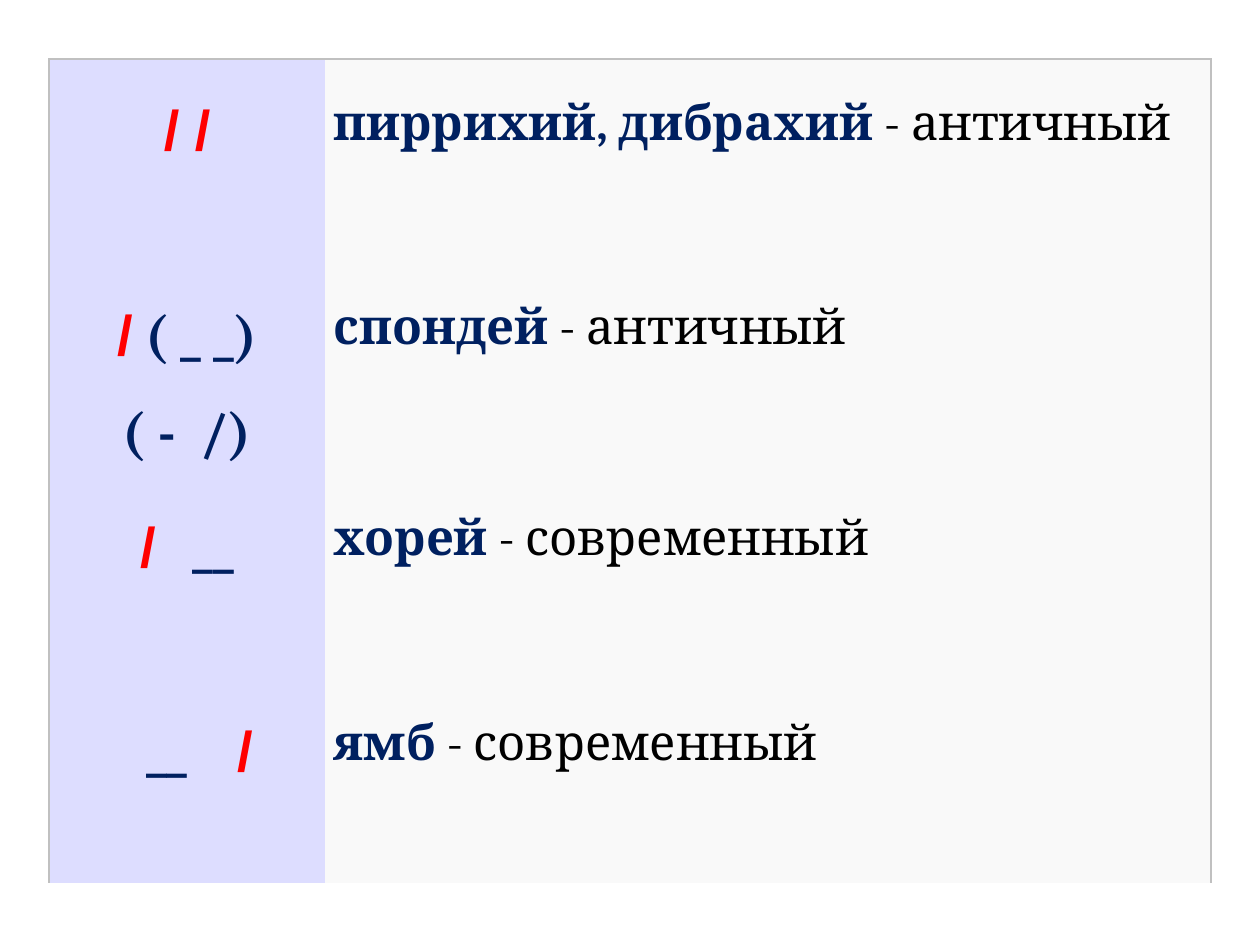
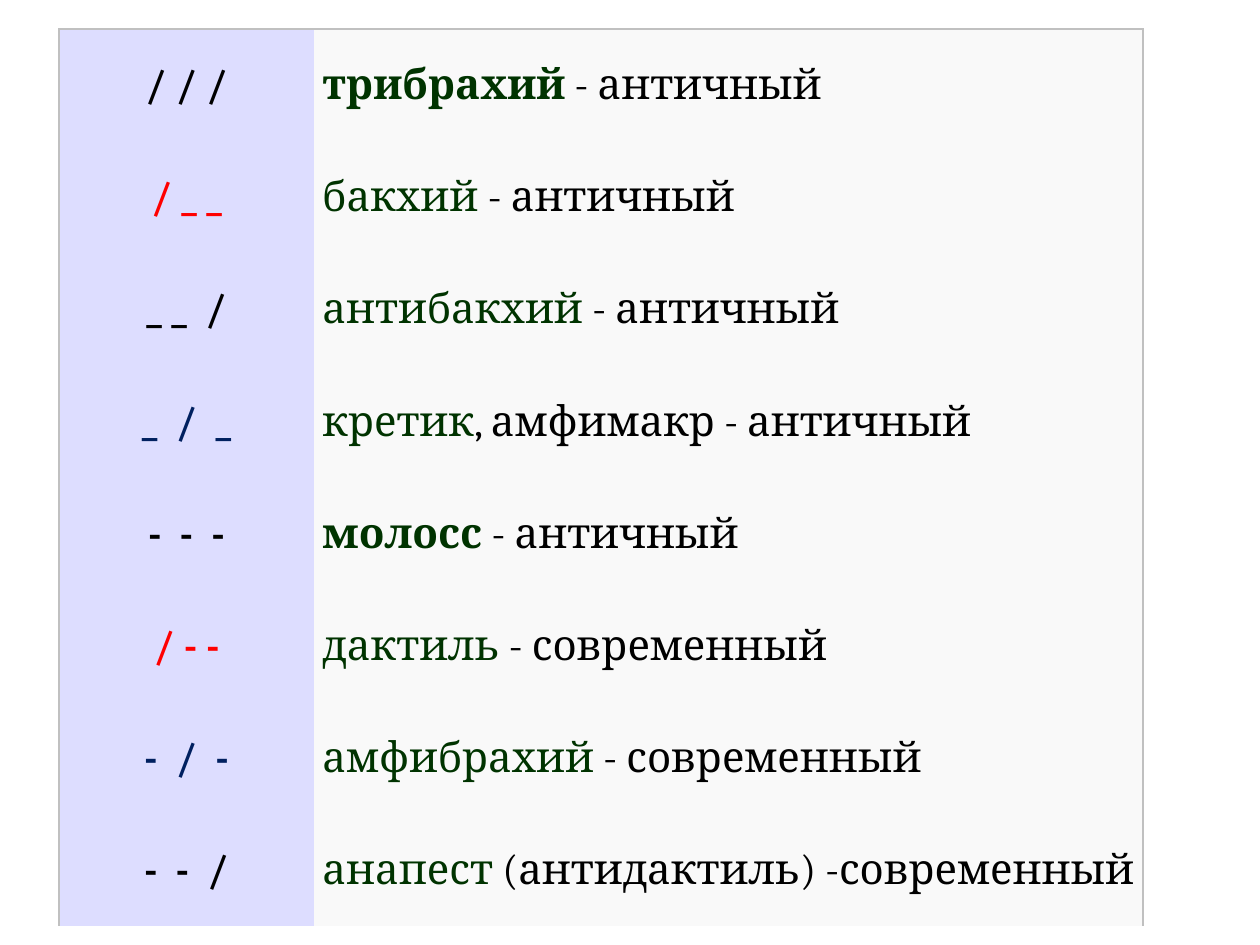
from lxml import etree
from pptx import Presentation
from pptx import util as u
from pptx.dml.color import RGBColor
from pptx.enum import text
from pptx.oxml import ns

COLORS = {
    "symbol_fill": "DDDDFF", "name_fill": "F9F9F9", "border": "C0C0C0",
    "black": "000000", "red": "FF0000", "navy": "002060",
    "green": "003300", "crimson": "C00000",
}
NO_STYLE_GRID = "{2D5ABB26-0587-4C30-8999-92F81FD0307C}"

# Run styles: font, colour, bold, outline colour
STYLES = {
    "accent": ("Arial", "red", True, None),
    "red": ("Cambria", "red", True, None),
    "navy": ("Cambria", "navy", True, None),
    "plain": ("Cambria", "black", False, None),
    "black": ("Cambria", "black", True, None),
    "green": ("Cambria", "green", True, None),
    "red_lined": ("Cambria", "red", True, "navy"),
    "black_lined": ("Cambria", "black", True, "green"),
    "navy_lined": ("Cambria", "navy", True, "crimson"),
    "green_navy": ("Cambria", "green", False, "navy"),
    "green_green": ("Cambria", "green", False, "green"),
    "green_crimson": ("Cambria", "green", False, "crimson"),
    "plain_crimson": ("Cambria", "black", False, "crimson"),
}

# Each row: paragraphs of the symbol cell, then runs of the name cell
TWO_SYLLABLES = [
    ([[("/ /", "accent")]],
     [("пиррихий, дибрахий ", "navy"), ("- античный", "plain")]),
    ([[(" ", "red"), ("/", "accent"), (" ( _ _) ", "navy")],
      [("( -  /)", "navy")]],
     [("спондей ", "navy"), ("- античный", "plain")]),
    ([[("/", "accent"), ("   __", "navy")]],
     [("хорей", "navy"), (" - современный", "plain")]),
    ([[("  __    ", "navy"), ("/", "accent")]],
     [("ямб", "navy"), (" - современный", "plain")]),
]
THREE_SYLLABLES = [
    ([[("/ / /", "black")]],
     [("трибрахий ", "green"), ("- античный", "plain")]),
    ([[("/ _ _", "red_lined")]],
     [("бакхий ", "green_navy"), ("- античный", "plain")]),
    ([[("_ _  /", "black_lined")]],
     [("антибакхий ", "green_green"), ("- античный", "plain")]),
    ([[("_  /  _", "navy_lined")]],
     [("кретик", "green_crimson"), (", ", "plain_crimson"),
      ("амфимакр - античный", "plain")]),
    ([[("-  -  -", "black")]],
     [("молосс", "green"), (" - античный", "plain")]),
    ([[("/ - -", "red_lined")]],
     [("дактиль ", "green_navy"), ("- современный", "plain")]),
    ([[("-  /  -", "navy_lined")]],
     [("амфибрахий ", "green_crimson"), ("- современный", "plain")]),
    ([[("-  -  /", "black_lined")]],
     [("анапест ", "green_green"), ("(антидактиль) -современный", "plain")]),
]
SLIDES = [
    dict(rows=TWO_SYLLABLES, left=0.39, top=0.47, widths=(2.19, 7.03),
         row_height=1.62, symbol_size=32, name_size=28, first_gap=6),
    dict(rows=THREE_SYLLABLES, left=0.47, top=0.23, widths=(2.02, 6.58),
         row_height=0.89, symbol_size=24, name_size=24, first_gap=0),
]


def make_line(parent, tag, color, width):
    """Append a solid line, or an empty one when color is None."""
    line = etree.SubElement(parent, ns.qn(tag), w=str(int(u.Pt(width))))
    if color is None:
        etree.SubElement(line, ns.qn("a:noFill"))
    else:
        fill = etree.SubElement(line, ns.qn("a:solidFill"))
        etree.SubElement(fill, ns.qn("a:srgbClr"), val=COLORS[color])
    return line


def add_span(para, words, style, size):
    font_name, color, bold, outline = STYLES[style]
    span = para.add_run()
    span.text = words
    span.font.name = font_name
    span.font.size = u.Pt(size)
    span.font.bold = bold
    span.font.color.rgb = RGBColor.from_string(COLORS[color])
    if outline:
        properties = span.font._element
        properties.insert(0, make_line(properties, "a:ln", outline, 0.75))


def fill_cell(cell, paragraphs, size, align, fill, sides, right_margin=0.07):
    """Write the text of a cell, then its borders and fill."""
    cell.margin_left = cell.margin_top = cell.margin_bottom = u.Inches(0.07)
    cell.margin_right = u.Inches(right_margin)
    cell.vertical_anchor = text.MSO_ANCHOR.TOP
    for index, spans in enumerate(paragraphs):
        frame = cell.text_frame
        para = frame.add_paragraph() if index else frame.paragraphs[0]
        para.alignment = align
        para.line_spacing = 1.5
        for words, style in spans:
            add_span(para, words, style, size)
    properties = cell._tc.get_or_add_tcPr()
    for side in "LRTB":
        make_line(properties, f"a:ln{side}",
                  "border" if side in sides else None, 1)
    cell.fill.solid()
    cell.fill.fore_color.rgb = RGBColor.from_string(COLORS[fill])


def add_feet_table(page, rows, left, top, widths, row_height,
                   symbol_size, name_size, first_gap):
    frame = page.shapes.add_table(
        len(rows), 2, u.Inches(left), u.Inches(top),
        u.Inches(sum(widths)), u.Inches(row_height * len(rows)))
    table = frame.table
    table.first_row = table.horz_banding = False
    table._tbl.tblPr.find(ns.qn("a:tableStyleId")).text = NO_STYLE_GRID
    for column, width in zip(table.columns, widths):
        column.width = u.Inches(width)
    for index, (symbols, name) in enumerate(rows):
        table.rows[index].height = u.Inches(row_height)
        edge = "" if index else "T"
        fill_cell(table.cell(index, 0), symbols, symbol_size,
                  text.PP_ALIGN.CENTER, "symbol_fill", "L" + edge)
        # The longest name needs a slim right margin to stay on one line
        fill_cell(table.cell(index, 1), [name], name_size,
                  text.PP_ALIGN.LEFT, "name_fill", "R" + edge, 0.02)
    if first_gap:
        first = table.cell(0, 0).text_frame.paragraphs[0]
        first.space_after = u.Pt(first_gap)


def main():
    deck = Presentation()
    deck.slide_width, deck.slide_height = u.Inches(10), u.Inches(7.5)
    for content in SLIDES:
        page = deck.slides.add_slide(deck.slide_layouts[6])
        add_feet_table(page, **content)
    deck.save("out.pptx")


if __name__ == "__main__":
    main()
